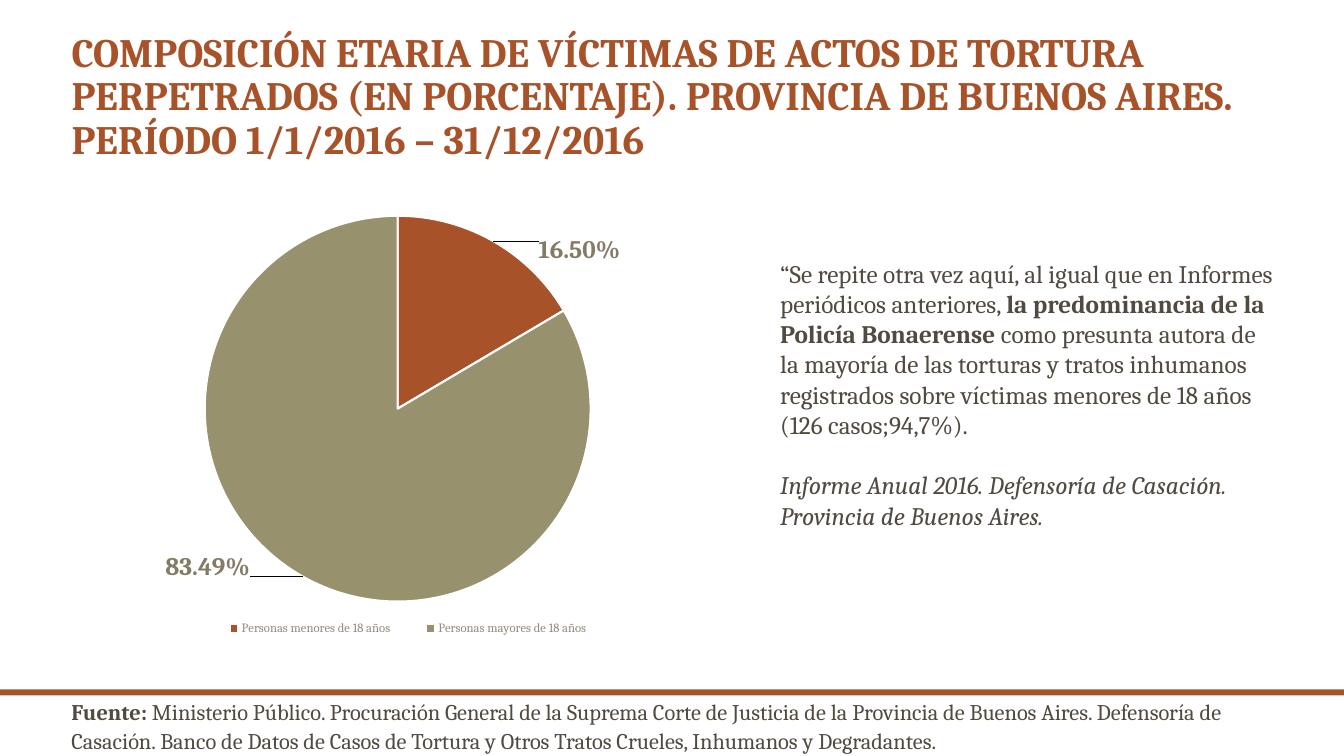
from lxml.etree import SubElement
from pptx import Presentation
from pptx.chart.data import CategoryChartData
from pptx.dml.color import RGBColor
from pptx.enum.chart import XL_CHART_TYPE, XL_LABEL_POSITION, XL_LEGEND_POSITION
from pptx.enum.shapes import MSO_SHAPE
from pptx.enum.text import MSO_ANCHOR, MSO_AUTO_SIZE, PP_ALIGN
from pptx.oxml.ns import qn
from pptx.util import Inches, Pt

RUST = RGBColor(0xA8, 0x52, 0x29)
OLIVE = RGBColor(0x98, 0x91, 0x6E)
BROWN = RGBColor(0x51, 0x4A, 0x40)
LABEL_BROWN = RGBColor(0x85, 0x7A, 0x68)
LEGEND_BROWN = RGBColor(0x96, 0x8B, 0x7A)
WHITE = RGBColor(0xFF, 0xFF, 0xFF)
FONT = "Cambria"


def set_layout(parent, index, **settings):
    for old in parent.findall(qn("c:layout")):
        parent.remove(old)
    layout = SubElement(parent, qn("c:layout"))
    parent.insert(index, layout)
    manual = SubElement(layout, qn("c:manualLayout"))
    for name, value in settings.items():
        SubElement(manual, qn(f"c:{name}")).set("val", str(value))


def add_span(para, text, size, color, bold=False, italic=False):
    span = para.add_run()
    span.text = text
    span.font.name = FONT
    span.font.size = Pt(size)
    span.font.color.rgb = color
    span.font.bold = bold
    span.font.italic = italic


deck = Presentation()
deck.slide_width = Inches(13.33)
deck.slide_height = Inches(7.5)
page = deck.slides.add_slide(deck.slide_layouts[5])

bar = page.shapes.add_shape(MSO_SHAPE.RECTANGLE, 0, Inches(6.84), Inches(13.33), Inches(0.06))
bar.shadow.inherit = False
bar.fill.solid()
bar.fill.fore_color.rgb = RUST
bar.line.fill.background()

title = page.shapes.title
title.left, title.top = Inches(0.61), Inches(0.26)
title.width, title.height = Inches(12.13), Inches(1.41)
title.text_frame.auto_size = MSO_AUTO_SIZE.NONE
title.text_frame.vertical_anchor = MSO_ANCHOR.BOTTOM
para = title.text_frame.paragraphs[0]
para.alignment = PP_ALIGN.LEFT
para.line_spacing = 0.9
add_span(
    para,
    "COMPOSICIÓN ETARIA DE VÍCTIMAS DE ACTOS DE TORTURA PERPETRADOS (EN PORCENTAJE). "
    "PROVINCIA DE BUENOS AIRES. PERÍODO 1/1/2016 – 31/12/2016",
    28.8, RUST, bold=True,
)

ages = CategoryChartData(number_format="0.00%")
ages.categories = ["Personas menores de 18 años", "Personas mayores de 18 años"]
ages.add_series("Series 1", [0.165, 0.8349])
chart = page.shapes.add_chart(
    XL_CHART_TYPE.PIE, Inches(0.43), Inches(1.8), Inches(6.96), Inches(4.85), ages
).chart
chart.has_title = False
chart.font.name = FONT
chart.font.size = Pt(10)
chart.font.color.rgb = BROWN
chart.has_legend = True
legend = chart.legend
legend.position = XL_LEGEND_POSITION.BOTTOM
legend.include_in_layout = False
legend.font.name = FONT
legend.font.size = Pt(9)
legend.font.color.rgb = LEGEND_BROWN
set_layout(legend._element, 1, xMode="edge", yMode="edge", x=0.22, y=0.89, w=0.6, h=0.05)

plot = chart.plots[0]
plot.vary_by_categories = True
set_layout(
    plot._element.getparent(), 0,
    layoutTarget="inner", xMode="edge", yMode="edge", x=0.23, y=0.07, w=0.55, h=0.79,
)
slices = [(RUST, 0.06, 0.06), (OLIVE, -0.07, -0.06)]
for index, (color, shift_x, shift_y) in enumerate(slices):
    point = plot.series[0].points[index]
    point.format.fill.solid()
    point.format.fill.fore_color.rgb = color
    point.format.line.color.rgb = WHITE
    point.format.line.width = Pt(1.5)
    label = point.data_label
    label.font.name = FONT
    label.font.size = Pt(18)
    label.font.bold = True
    label.font.color.rgb = LABEL_BROWN
    label.position = XL_LABEL_POSITION.OUTSIDE_END
    set_layout(plot.series[0]._element.findall(".//" + qn("c:dLbl"))[index], 1, x=shift_x, y=shift_y)

quote = page.shapes.add_textbox(Inches(7.64), Inches(2.51), Inches(5.1), Inches(3.13)).text_frame
quote.word_wrap = True
para = quote.paragraphs[0]
add_span(para, "“Se repite otra vez aquí, al igual que en Informes periódicos anteriores, ", 18, BROWN)
add_span(para, "la predominancia de la Policía Bonaerense", 18, BROWN, bold=True)
add_span(
    para,
    " como presunta autora de la mayoría de las torturas y tratos inhumanos registrados "
    "sobre víctimas menores de 18 años (126 casos;94,7%).",
    18, BROWN,
)
para = quote.add_paragraph()
para.space_before = Pt(21.6)
add_span(
    para, "Informe Anual 2016. Defensoría de Casación. Provincia de Buenos Aires.",
    18, BROWN, italic=True,
)

source = page.shapes.add_textbox(Inches(0.61), Inches(6.86), Inches(12.13), Inches(0.66)).text_frame
source.word_wrap = True
para = source.paragraphs[0]
para.line_spacing = 1.07
add_span(para, "Fuente:", 16, BROWN, bold=True)
add_span(
    para,
    " Ministerio Público. Procuración General de la Suprema Corte de Justicia de la Provincia "
    "de Buenos Aires. Defensoría de Casación. Banco de Datos de Casos de Tortura y Otros Tratos "
    "Crueles, Inhumanos y Degradantes.",
    16, BROWN,
)

deck.save("out.pptx")
